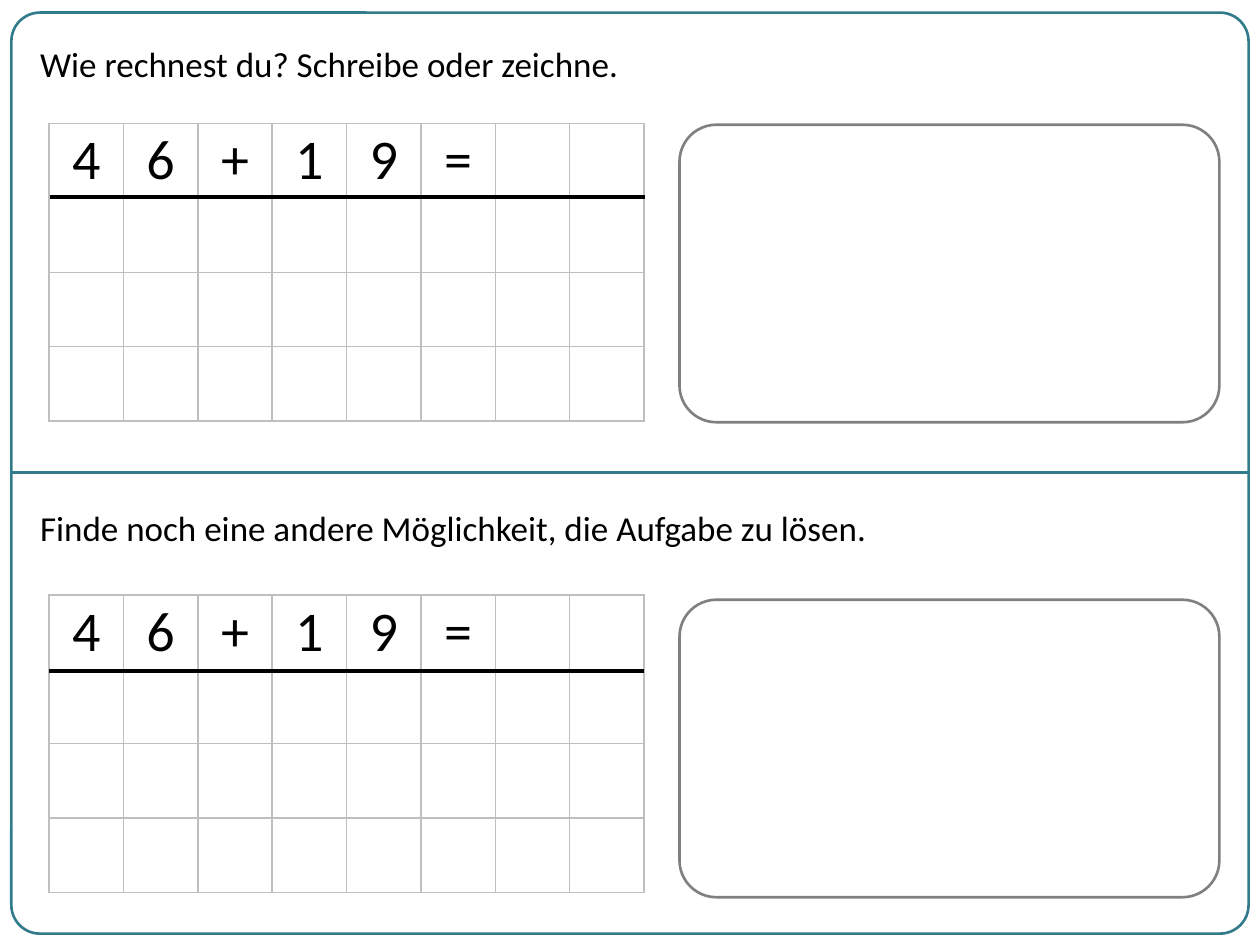
"""Build a worksheet slide with two arithmetic tasks, each with a grid and a drawing box."""
from lxml.etree import SubElement
from pptx import Presentation
from pptx.dml.color import RGBColor
from pptx.enum.shapes import MSO_CONNECTOR, MSO_SHAPE
from pptx.enum.text import MSO_ANCHOR, MSO_AUTO_SIZE, PP_ALIGN
from pptx.oxml import parse_xml
from pptx.oxml.ns import nsdecls, qn
from pptx.util import Pt

TEAL, GREY, GRID, BLACK = "327B8A", "808080", "BFBFBF", "000000"
CELL, COLS, ROWS = 42.5, 8, 4
TASK = "46+19="
TASKS = [
    {"text": "Wie rechnest du? Schreibe oder zeichne.",
     "text_top": 20.9, "grid_top": 70.6, "box_top": 71.3, "rule": (28.8, 112.4)},
    {"text": "Finde noch eine andere Möglichkeit, die Aufgabe zu lösen.",
     "text_top": 285.8, "grid_top": 340, "box_top": 342.7, "rule": (28.1, 383.6)},
]


def paint(fmt, color, width=None):
    if width:
        fmt.width = Pt(width)
        fmt = fmt.fill
    fmt.solid()
    fmt.fore_color.rgb = RGBColor.from_string(color)


def outline(kind, x, y, w, h, color, width, adj=None):
    if kind == "line":
        sp = s.shapes.add_connector(MSO_CONNECTOR.STRAIGHT, Pt(x), Pt(y), Pt(x + w), Pt(y + h))
        SubElement(sp._element.spPr, qn("a:effectLst"))
    else:
        sp = s.shapes.add_shape(MSO_SHAPE.ROUNDED_RECTANGLE, Pt(x), Pt(y), Pt(w), Pt(h))
        sp.adjustments[0] = adj
        sp.fill.background()
        sp.shadow.inherit = False
    paint(sp.line, color, width)


prs = Presentation()
prs.slide_width, prs.slide_height = Pt(720), Pt(540)
s = prs.slides.add_slide(prs.slide_layouts[6])

outline("box", 6.5, 7.2, 707, 526.3, TEAL, 1.5, 0.031)

for task in TASKS:
    tf = s.shapes.add_textbox(Pt(15.8), Pt(task["text_top"]), Pt(669), Pt(31.5)).text_frame
    tf.word_wrap = True
    tf.auto_size = MSO_AUTO_SIZE.SHAPE_TO_FIT_TEXT
    r = tf.paragraphs[0].add_run()
    r.text = task["text"]
    r.font.name, r.font.size = "Calibri", Pt(20)
    paint(r.font.fill, BLACK)

    table = s.shapes.add_table(ROWS, COLS, Pt(28.1), Pt(task["grid_top"]),
                               Pt(COLS * CELL), Pt(ROWS * CELL)).table
    table.first_row = table.horz_banding = False
    for col in table.columns:
        col.width = Pt(CELL)
    for row in table.rows:
        row.height = Pt(CELL)
    for i, cell in enumerate(table.iter_cells()):
        margins = dict.fromkeys(["margin_left", "margin_right", "margin_top", "margin_bottom"], 0)
        for name, value in {**margins, "vertical_anchor": MSO_ANCHOR.MIDDLE}.items():
            setattr(cell, name, value)
        cell.fill.background()
        for n, side in enumerate(["lnL", "lnR", "lnT", "lnB"]):
            cell._tc.get_or_add_tcPr().insert(n, parse_xml(
                f'<a:{side} {nsdecls("a")} w="{Pt(1)}"><a:solidFill>'
                f'<a:srgbClr val="{GRID}"/></a:solidFill></a:{side}>'))
        if i < len(TASK):
            p = cell.text_frame.paragraphs[0]
            p.alignment = PP_ALIGN.CENTER
            r = p.add_run()
            r.text = TASK[i]
            r.font.name, r.font.size = "Calibri", Pt(32)
            paint(r.font.fill, BLACK)

    outline("line", *task["rule"], COLS * CELL, 0, BLACK, 2.25)
    outline("box", 388.3, task["box_top"], 308.5, 170, GREY, 1.5, 0.124)

outline("line", 6.5, 270, 707, 0, TEAL, 1.5)

prs.save("out.pptx")
